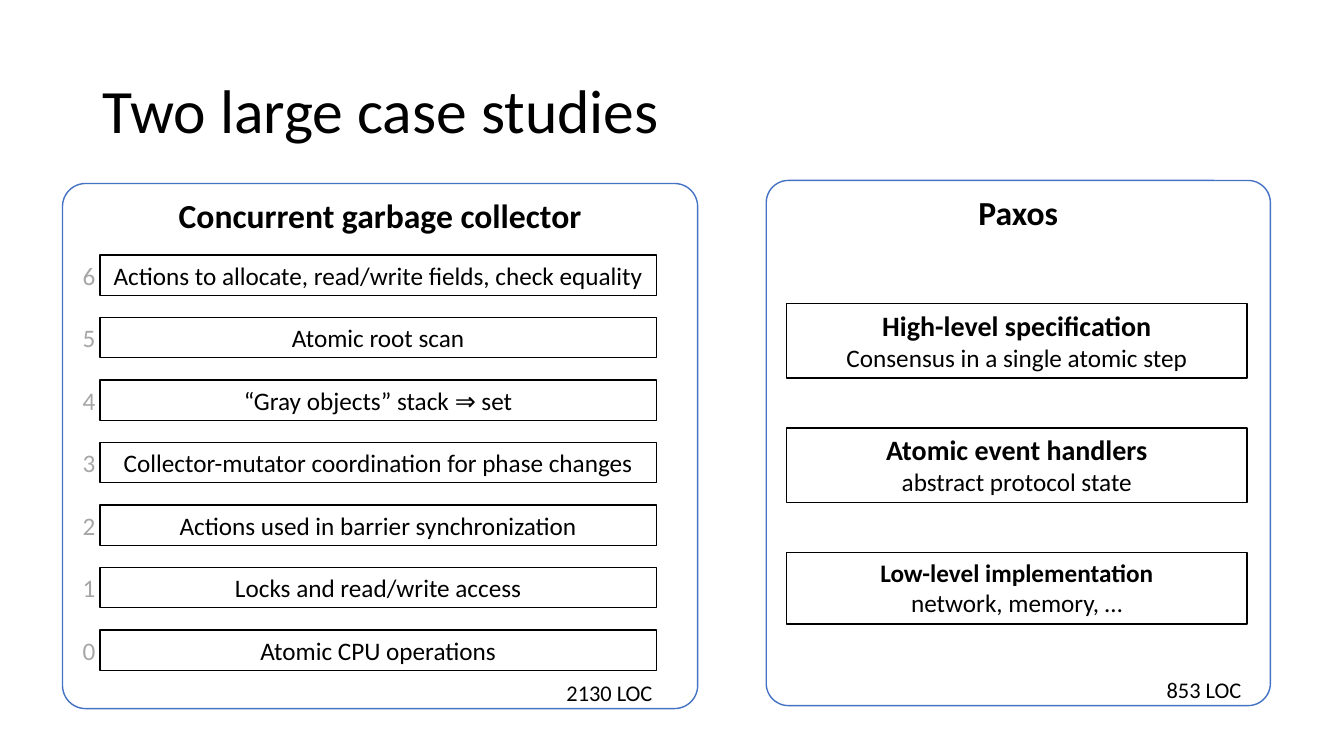
from pptx import Presentation, util as u
from pptx.dml.color import RGBColor
from pptx.enum import shapes, text

COLORS = {"ink": "000000", "paper": "FFFFFF", "panel": "4472C4", "level": "A6A6A6"}
LEVELS = [
    "Actions to allocate, read/write fields, check equality",
    "Atomic root scan",
    "“Gray objects” stack ⇒ set",
    "Collector-mutator coordination for phase changes",
    "Actions used in barrier synchronization",
    "Locks and read/write access",
    "Atomic CPU operations",
]
# heading, heading size, detail, box height in rows
LAYERS = [
    ("High-level specification", 20, "Consensus in a single atomic step", 7.4),
    ("Atomic event handlers", 20, "abstract protocol state", 7.4),
    ("Low-level implementation", 18, "network, memory, …", 7.1),
]
LEFT, CENTER, RIGHT = text.PP_ALIGN.LEFT, text.PP_ALIGN.CENTER, text.PP_ALIGN.RIGHT


class Deck:
    """Draws on one slide; places are (column, row, columns, rows) of a 0.1 inch grid."""

    FONT = "Calibri"
    CELL = u.Inches(0.1)

    def __init__(self):
        self.prs = Presentation()
        self.prs.slide_width, self.prs.slide_height = u.Inches(13.33), u.Inches(7.5)
        self.s = self.prs.slides.add_slide(self.prs.slide_layouts[6])

    def place(self, at):
        return [round(n * self.CELL) for n in at]

    def color(self, name):
        return RGBColor.from_string(COLORS[name])

    def add_lines(self, sp, lines, align, color="ink", anchor=text.MSO_ANCHOR.TOP,
                  grow=True, wrap=True, spacing=1.0):
        """Fill a shape with lines of (wording, size, bold)."""
        tf = sp.text_frame
        tf.word_wrap = wrap
        tf.vertical_anchor = anchor
        if grow:
            tf.auto_size = text.MSO_AUTO_SIZE.SHAPE_TO_FIT_TEXT
        for i, (wording, size, bold) in enumerate(lines):
            p = tf.add_paragraph() if i else tf.paragraphs[0]
            p.alignment, p.line_spacing = align, spacing
            r = p.add_run()
            r.text = wording
            r.font.name, r.font.size, r.font.bold = self.FONT, u.Pt(size), bold
            r.font.color.rgb = self.color(color)

    def outline(self, kind, at, line):
        sp = self.s.shapes.add_shape(kind, *self.place(at))
        sp.shadow.inherit = False
        sp.fill.solid()
        sp.fill.fore_color.rgb = self.color("paper")
        sp.line.color.rgb = self.color(line)
        sp.line.width = u.Pt(1)
        return sp

    def panel(self, at, heading):
        sp = self.outline(shapes.MSO_SHAPE.ROUNDED_RECTANGLE, at, "panel")
        sp.adjustments[0] = 0.044
        self.add_lines(sp, [(heading, 24, True)], CENTER, grow=False)

    def box(self, at, lines):
        self.add_lines(self.outline(shapes.MSO_SHAPE.RECTANGLE, at, "ink"), lines, CENTER)

    def label(self, at, wording, size, align, **style):
        sp = self.s.shapes.add_textbox(*self.place(at))
        self.add_lines(sp, [(wording, size, False)], align, **style)


def main():
    deck = Deck()
    deck.label((9.2, 4, 115, 14.5), "Two large case studies", 44, LEFT,
               anchor=text.MSO_ANCHOR.MIDDLE, grow=False, spacing=0.9)

    deck.panel((6.2, 18.2, 63, 52.1), "Concurrent garbage collector")
    for i, level in enumerate(LEVELS):
        row = 25.3 + 6.2 * i
        deck.box((9.9, row, 55.2, 4), [(level, 18, False)])
        deck.label((7.2, row, 2.2, 4), str(len(LEVELS) - 1 - i), 18, CENTER, color="level")
    deck.label((55, 66.9, 10.7, 3.7), "2130 LOC", 16, RIGHT, wrap=False)

    deck.panel((76, 17.9, 50, 52.1), "Paxos")
    for i, (heading, size, detail, rows) in enumerate(LAYERS):
        deck.box((78, 30.1 + 12.35 * i, 45.7, rows),
                 [(heading, size, True), (detail, 18, False)])
    deck.label((114.6, 66.6, 9.5, 3.7), "853 LOC", 16, RIGHT, wrap=False)

    deck.prs.save("out.pptx")


if __name__ == "__main__":
    main()
